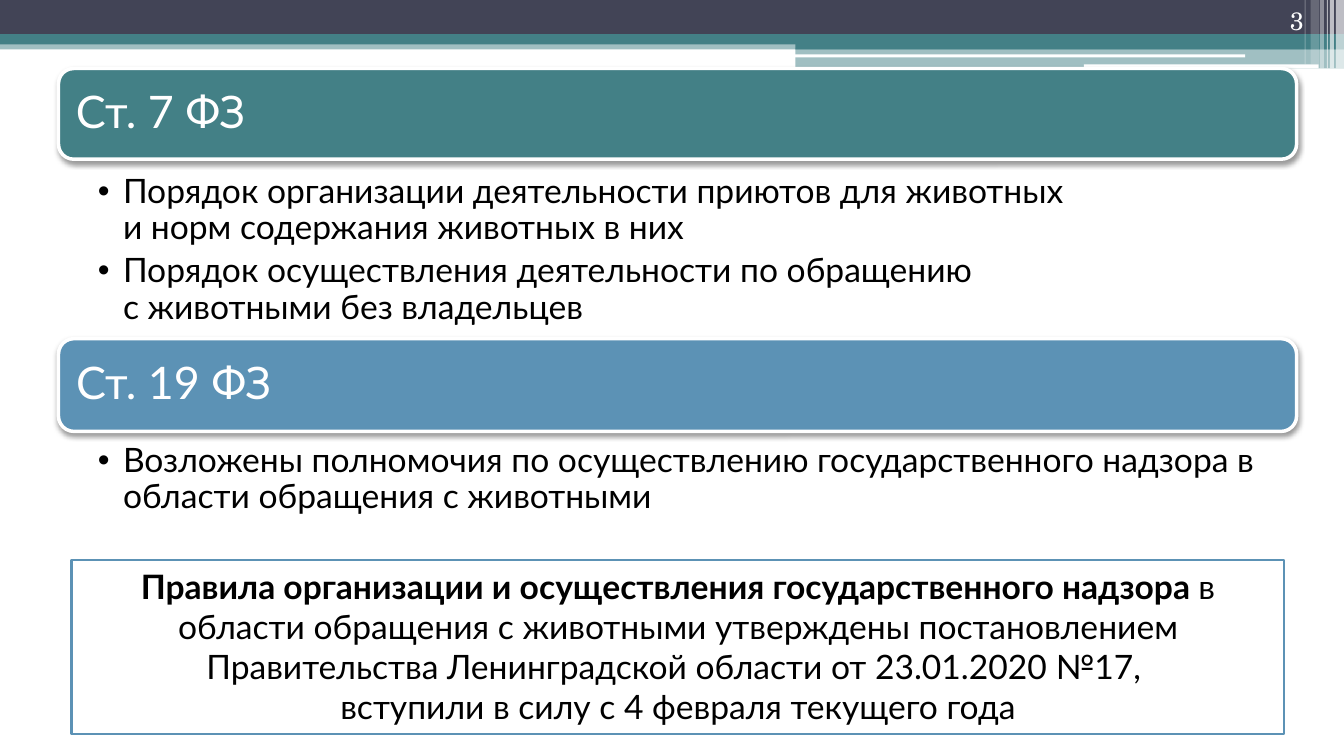
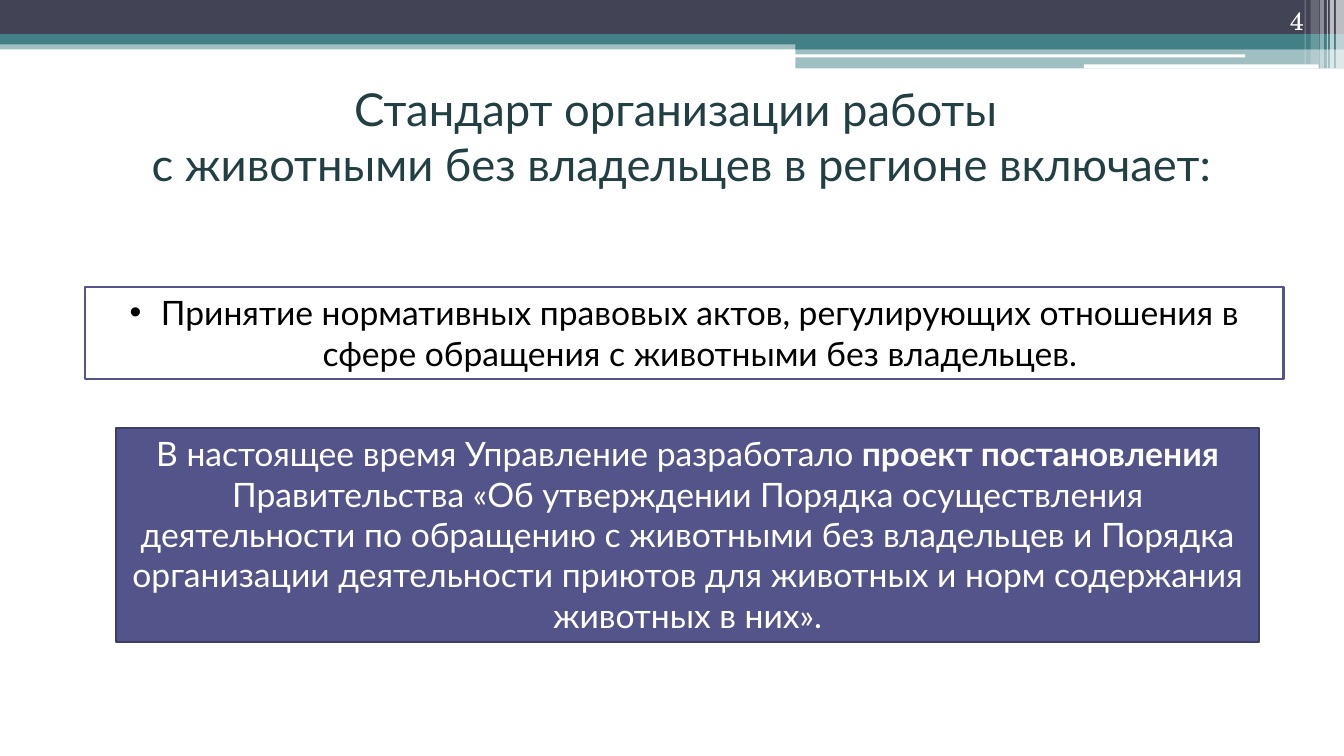
import pptx
import pptx.util
import pptx.dml.color
import pptx.enum.shapes
import pptx.enum.text
import pptx.oxml
import pptx.oxml.ns
import lxml.etree

Inches = pptx.util.Inches
Pt = pptx.util.Pt
RGB = pptx.dml.color.RGBColor.from_string
SHAPE = pptx.enum.shapes.MSO_SHAPE
ALIGN = pptx.enum.text.PP_ALIGN
ANCHOR = pptx.enum.text.MSO_ANCHOR
qn = pptx.oxml.ns.qn

C = {
    "white": "FFFFFF", "black": "000000", "dark": "424456",
    "teal": "438086", "title": "224043", "blue": "5C92B5",
    "violet": "53548A", "violet_line": "3D3E66",
}
FONT = "Lato"
NUMBER_FONT = "TeX Gyre Schola"
INSETS = (0.1, 0.05, 0.1, 0.05)

BANDS = [
    (0, 0.4, 13.33, 0.09, "teal", 50),
    (0, 0, 13.33, 0.34, "dark", 100),
    (0, 0.34, 13.33, 0.1, "teal", 100),
    (7.89, 0.39, 5.44, 0.1, "teal", 100),
    (7.89, 0.48, 5.44, 0.2, "teal", 50),
    (7.88, 0.54, 4.47, 0.03, "white", 100),
    (10.75, 0.64, 2.33, 0.04, "white", 100),
    (13.25, 0, 0.08, 0.68, "white", 65),
    (13.19, 0, 0.04, 0.68, "white", 65),
    (13.16, 0, 0.01, 0.68, "white", 60),
    (13.09, 0, 0.04, 0.68, "white", 40),
    (13, 0, 0.08, 0.64, "white", 20),
    (12.94, 0, 0.01, 0.64, "white", 30),
]

SHADOW = (
    '<a:effectLst xmlns:a="http://schemas.openxmlformats.org/drawingml/2006/main">'
    '<a:outerShdw blurRad="52000" dist="25400" dir="5400000" rotWithShape="0">'
    '<a:srgbClr val="000000"><a:alpha val="40000"/></a:srgbClr>'
    '</a:outerShdw></a:effectLst>'
)


def add_box(s, box, fill, line=None, width=1.5, preset=SHAPE.RECTANGLE, alpha=100):
    sp = s.shapes.add_shape(preset, *[Inches(v) for v in box])
    sp.shadow.inherit = False
    sp.fill.solid()
    sp.fill.fore_color.rgb = RGB(C[fill])
    if alpha < 100:
        color = sp.fill._xPr.find(qn("a:solidFill"))[0]
        lxml.etree.SubElement(color, qn("a:alpha")).set("val", str(alpha * 1000))
    if line:
        sp.line.color.rgb = RGB(C[line])
        sp.line.width = Pt(width)
    else:
        sp.line.fill.background()
    return sp


def write(sp, paragraphs, size, color, align=ALIGN.LEFT, anchor=ANCHOR.TOP,
          insets=INSETS, spacing=None, after=0, bullet=0, font=FONT):
    tf = sp.text_frame
    tf.word_wrap = True
    tf.vertical_anchor = anchor
    tf.margin_left, tf.margin_top, tf.margin_right, tf.margin_bottom = [
        Inches(v) for v in insets]
    for i, text in enumerate(paragraphs):
        p = tf.paragraphs[0] if i == 0 else tf.add_paragraph()
        p.alignment = align
        p.line_spacing = spacing
        p.space_after = Pt(after)
        if bullet:
            pPr = p._p.get_or_add_pPr()
            pPr.set("marL", str(Inches(bullet)))
            pPr.set("indent", str(-Inches(bullet)))
            lxml.etree.SubElement(pPr, qn("a:buFont")).set("typeface", "Arial")
            lxml.etree.SubElement(pPr, qn("a:buChar")).set("char", "•")
        for j, part in enumerate(text.split("*")):
            for k, row in enumerate(part.split("\n")):
                if k:
                    p.add_line_break()
                if not row:
                    continue
                r = p.add_run()
                r.text = row
                r.font.name = font
                r.font.size = Pt(size)
                r.font.bold = j % 2 == 1
                r.font.color.rgb = RGB(C[color])


prs = pptx.Presentation()
prs.slide_width = Inches(13.33)
prs.slide_height = Inches(7.5)

slides = []
for number in (3, 4):
    s = prs.slides.add_slide(prs.slide_layouts[6])
    for *box, fill, alpha in BANDS:
        add_box(s, box, fill, alpha=alpha)
    sp = s.shapes.add_textbox(Inches(11.92), Inches(0), Inches(1.11), Inches(0.4))
    write(sp, [str(number)], 18, "white", ALIGN.RIGHT, ANCHOR.BOTTOM, font=NUMBER_FONT)
    slides.append(s)
laws, standard = slides

ARTICLES = [
    ("Ст. 7 ФЗ", "teal", 0.68, 0.9, 1.7, 1.62, [
        "Порядок организации деятельности приютов для животных \n"
        "и норм содержания животных в них",
        "Порядок осуществления деятельности по обращению \n"
        "с животными без владельцев"]),
    ("Ст. 19 ФЗ", "blue", 3.36, 0.92, 4.37, 1.18, [
        "Возложены полномочия по осуществлению государственного надзора "
        "в области обращения с животными"]),
]
for heading, fill, top, height, body_top, body_height, points in ARTICLES:
    sp = add_box(laws, (0.58, top, 12.28, height), fill, "white", 2.5,
                 SHAPE.ROUNDED_RECTANGLE)
    spPr = sp._element.spPr
    spPr.replace(spPr.find(qn("a:effectLst")), pptx.oxml.parse_xml(SHADOW))
    write(sp, [heading], 32, "white", anchor=ANCHOR.MIDDLE, insets=(0.13,) * 4,
          spacing=0.9)
    sp = laws.shapes.add_textbox(Inches(0.58), Inches(body_top),
                                 Inches(12.28), Inches(body_height))
    write(sp, points, 24, "black", insets=(0.39, 0.03, 0.19, 0.03), spacing=0.9,
          after=5, bullet=0.25)

sp = add_box(laws, (0.71, 5.56, 12.03, 1.72), "white", "blue")
write(sp, ["*Правила организации и осуществления государственного надзора *"
           "в области обращения с животными утверждены постановлением "
           "Правительства Ленинградской области от 23.01.2020 №17, ",
           "вступили в силу с 4 февраля текущего года"],
      24, "black", ALIGN.CENTER)

sp = standard.shapes.add_textbox(Inches(0.76), Inches(0.76), Inches(12), Inches(1.18))
write(sp, ["Стандарт организации работы \nс животными без владельцев в регионе включает:"],
      32.4, "title", ALIGN.CENTER, ANCHOR.MIDDLE)

sp = add_box(standard, (0.84, 2.85, 11.89, 0.91), "white", "violet")
write(sp, ["Принятие нормативных правовых актов, регулирующих отношения "
           "в сфере обращения с животными без владельцев."],
      24, "black", ALIGN.CENTER, bullet=0.31)

sp = add_box(standard, (1.15, 4.25, 11.34, 2.12), "violet", "violet_line")
write(sp, ["В настоящее время Управление разработало *проект постановления *"
           "Правительства «Об утверждении Порядка осуществления деятельности "
           "по обращению с животными без владельцев и Порядка организации "
           "деятельности приютов для животных и норм содержания животных в них»."],
      24, "white", ALIGN.CENTER)

prs.save("out.pptx")
